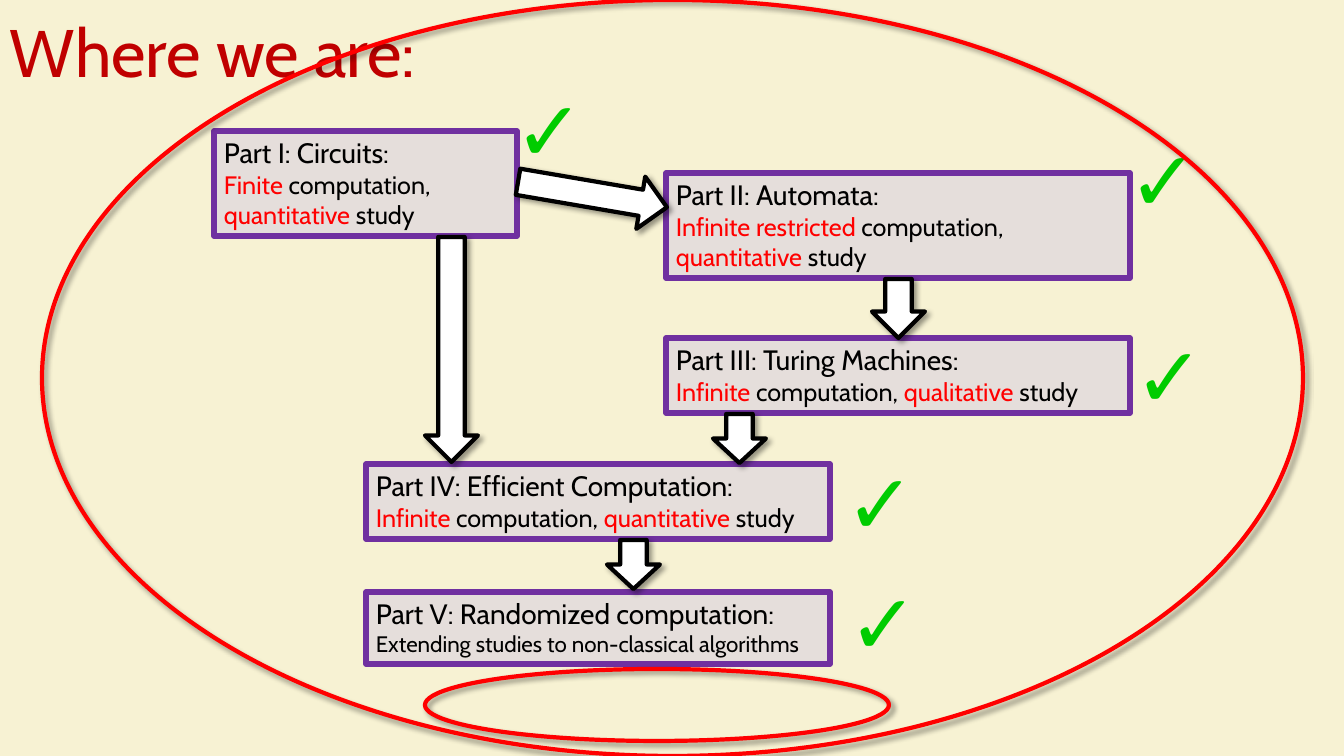
import pptx
import pptx.dml.color
import pptx.enum.shapes
import pptx.enum.text
import pptx.oxml
import pptx.oxml.ns
import pptx.util
from dataclasses import dataclass

PX = 914400 / 100.8
SHAPE = pptx.enum.shapes.MSO_SHAPE
ANCHOR = pptx.enum.text.MSO_ANCHOR
FIT = pptx.enum.text.MSO_AUTO_SIZE.SHAPE_TO_FIT_TEXT
rgb = pptx.dml.color.RGBColor.from_string


@dataclass(frozen=True)
class Theme:
    font: str = "Cabin"
    background: str = "F7F2D3"
    title: str = "C00000"
    ink: str = "000000"
    accent: str = "FF0000"
    panel: str = "E5DEDB"
    border: str = "7030A0"
    arrow: str = "FFFFFF"
    check: str = "00CC00"
    title_size: int = 48
    heading_size: int = 20
    body_size: int = 18
    small_size: int = 16
    check_size: int = 60


theme = Theme()

deck = pptx.Presentation()
deck.slide_width = round(1344 * PX)
deck.slide_height = round(756 * PX)
page = deck.slides.add_slide(deck.slide_layouts[6])
page.background.fill.solid()
page.background.fill.fore_color.rgb = rgb(theme.background)


def add_span(para, text, *, size, color=theme.ink):
    span = para.add_run()
    span.text = text
    span.font.name = theme.font
    span.font.size = pptx.util.Pt(size)
    span.font.color.rgb = rgb(color)


def add_outline(kind, place, *, line, width, fill=None, shadow=False):
    shape = page.shapes.add_shape(kind, *(round(length * PX) for length in place))
    if fill:
        shape.fill.solid()
        shape.fill.fore_color.rgb = rgb(fill)
    else:
        shape.fill.background()
    shape.line.color.rgb = rgb(line)
    shape.line.width = pptx.util.Pt(width)
    shape.shadow.inherit = False
    if shadow:
        effects = shape._element.spPr.find(pptx.oxml.ns.qn("a:effectLst"))
        effects.append(pptx.oxml.parse_xml(
            f'<a:outerShdw {pptx.oxml.ns.nsdecls("a")} blurRad="50800" dist="38100" '
            'dir="2700000" algn="tl" rotWithShape="0">'
            '<a:srgbClr val="000000"><a:alpha val="40000"/></a:srgbClr></a:outerShdw>'))
    return shape


title = page.shapes.add_textbox(0, 0, deck.slide_width, round(112 * PX))
title.text_frame.word_wrap = True
title.text_frame.vertical_anchor = ANCHOR.MIDDLE
title_para = title.text_frame.paragraphs[0]
title_para.line_spacing = 0.9
add_span(title_para, "Where we are:", size=theme.title_size, color=theme.title)

body, small = theme.body_size, theme.small_size
red, black = theme.accent, theme.ink
parts = [
    ((214, 131, 303, 105), "Part I: Circuits:", body,
     [[("Finite", red), (" computation,", black)],
      [("quantitative", red), (" study", black)]]),
    ((666, 173, 464, 105), "Part II: Automata:", body,
     [[("Infinite restricted", red), (" computation, ", black),
       ("quantitative", red), (" study", black)]]),
    ((666, 338, 464, 75), "Part III: Turing Machines:", body,
     [[("Infinite", red), (" computation, ", black),
       ("qualitative", red), (" study", black)]]),
    ((366, 464, 464, 75), "Part IV: Efficient Computation:", body,
     [[("Infinite", red), (" computation, ", black),
       ("quantitative", red), (" study", black)]]),
    ((366, 592, 464, 72), "Part V: Randomized computation:", small,
     [[("Extending studies to non-classical algorithms", black)]]),
]
for place, heading, size, lines in parts:
    box = add_outline(SHAPE.RECTANGLE, place, line=theme.border, width=4, fill=theme.panel)
    frame = box.text_frame
    frame.word_wrap = True
    frame.auto_size = FIT
    frame.vertical_anchor = ANCHOR.TOP
    add_span(frame.paragraphs[0], heading, size=theme.heading_size)
    for line in lines:
        para = frame.add_paragraph()
        for text, color in line:
            add_span(para, text, size=size, color=color)
    for para in frame.paragraphs:
        para.alignment = pptx.enum.text.PP_ALIGN.LEFT

arrows = [
    (713, 414, 49, 0),
    (607, 540, 49, 0),
    (566, 119, 151, 279.7),
    (872, 279, 59, 0),
    (425, 237, 225, 0),
]
for left, top, height, rotation in arrows:
    arrow = add_outline(SHAPE.DOWN_ARROW, (left, top, 53, height), line=theme.ink,
                        width=3, fill=theme.arrow, shadow=True)
    arrow.rotation = rotation

for left, top in [(1119, 123), (505, 73), (839, 566), (836, 446), (1125, 319)]:
    check = page.shapes.add_textbox(*(round(length * PX) for length in (left, top, 87, 112)))
    check.text_frame.word_wrap = False
    check.text_frame.auto_size = FIT
    add_span(check.text_frame.paragraphs[0], "✓", size=theme.check_size, color=theme.check)

for place in [(425, 669, 464, 72), (42, 0, 1261, 756)]:
    add_outline(SHAPE.OVAL, place, line=theme.accent, width=3, shadow=True)

deck.save("out.pptx")
